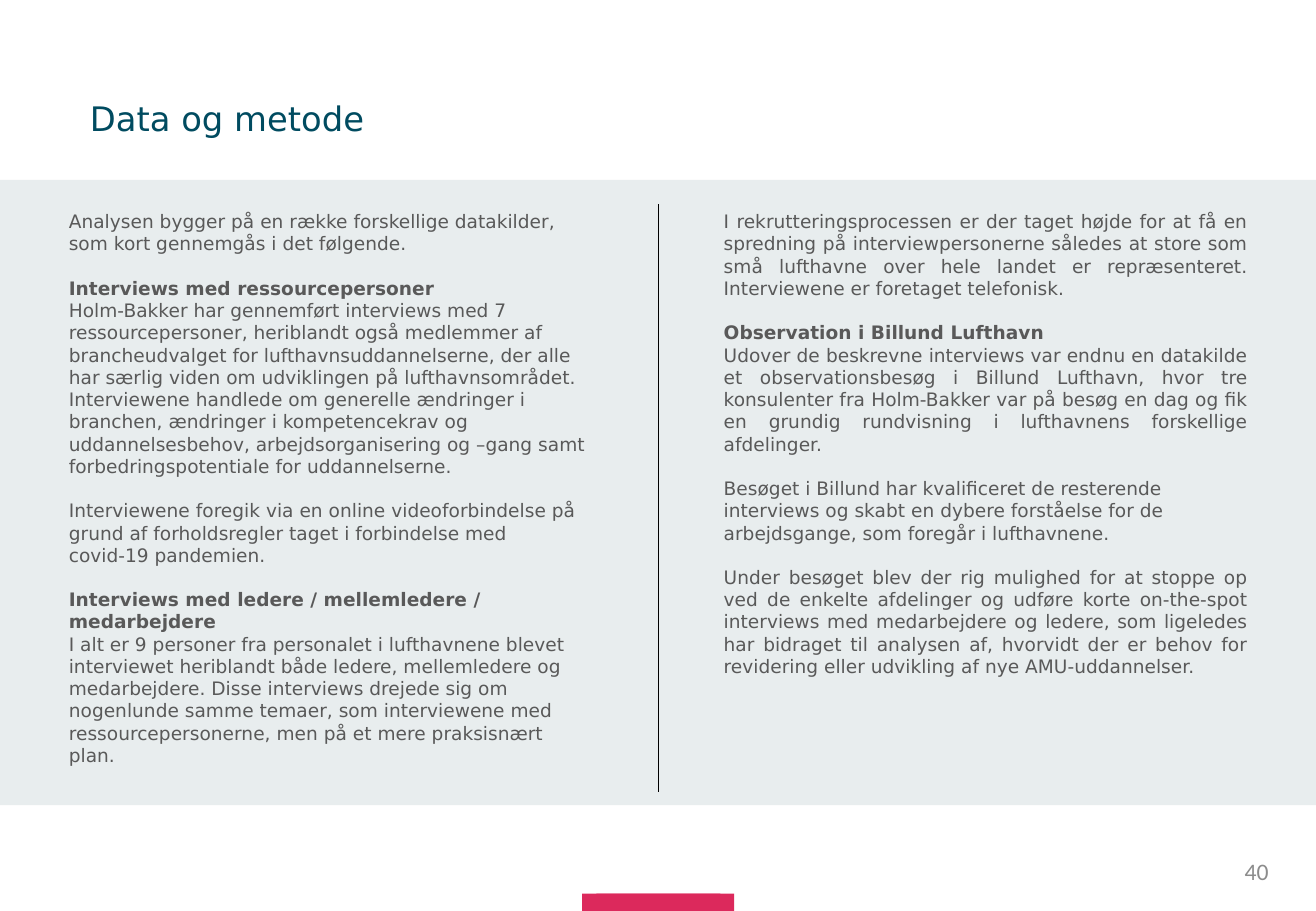
from dataclasses import dataclass

import pptx
import pptx.dml.color
import pptx.enum.shapes
import pptx.enum.text
import pptx.oxml.ns
import pptx.oxml.xmlchemy
import pptx.slide
import pptx.util

Cm = pptx.util.Cm
Pt = pptx.util.Pt
Align = pptx.enum.text.PP_ALIGN
Anchor = pptx.enum.text.MSO_ANCHOR


@dataclass(frozen=True)
class Theme:
    accent: str = "DC295C"
    band: str = "8DA5AD"
    title: str = "004B60"
    body: str = "595959"
    number: str = "8C8C8C"
    divider: str = "000000"
    text_font: str = "DejaVu Sans"
    number_font: str = "Calibri"
    title_size: int = 20
    body_size: int = 11
    number_size: int = 14
    section_gap: int = 13


@dataclass(frozen=True)
class Area:
    left: float
    top: float
    width: float
    height: float

    def lengths(self) -> list[pptx.util.Length]:
        return [Cm(value) for value in (self.left, self.top, self.width, self.height)]


@dataclass(frozen=True)
class Block:
    area: Area
    color: str
    opacity: int = 100


@dataclass(frozen=True)
class Passage:
    text: str
    bold: bool = False
    align: Align = Align.LEFT
    gap: bool = True


@dataclass(frozen=True)
class TextArea:
    area: Area
    passages: list[Passage]
    size: int
    color: str
    font: str = Theme.text_font
    anchor: Anchor = Anchor.TOP
    margin: float = 0.25
    line_spacing: float = 1.0


THEME = Theme()
SLIDE_WIDTH, SLIDE_HEIGHT = 27.51, 19.05
COLUMN_TOP, COLUMN_WIDTH = 4.27, 11.46
DIVIDER_BOTTOM = 16.56

BLOCKS = [
    Block(Area(12.17, 18.69, 3.18, 0.36), THEME.accent),
    Block(Area(12.47, 18.69, 2.59, 0.36), THEME.accent),
    Block(Area(0, 3.76, SLIDE_WIDTH, 13.08), THEME.band, opacity=20),
]

INTERVIEWS = [
    Passage("Analysen bygger på en række forskellige datakilder, som kort gennemgås i det følgende."),
    Passage("Interviews med ressourcepersoner", bold=True),
    Passage(
        "Holm-Bakker har gennemført interviews med 7 ressourcepersoner, heriblandt også "
        "medlemmer af brancheudvalget for lufthavnsuddannelserne, der alle har særlig viden "
        "om udviklingen på lufthavnsområdet. Interviewene handlede om generelle ændringer i "
        "branchen, ændringer i kompetencekrav og uddannelsesbehov, arbejdsorganisering og "
        "–gang samt forbedringspotentiale for uddannelserne.",
        gap=False,
    ),
    Passage(
        "Interviewene foregik via en online videoforbindelse på grund af forholdsregler "
        "taget i forbindelse med covid-19 pandemien."
    ),
    Passage("Interviews med ledere / mellemledere / medarbejdere", bold=True),
    Passage(
        "I alt er 9 personer fra personalet i lufthavnene blevet interviewet heriblandt både "
        "ledere, mellemledere og medarbejdere. Disse interviews drejede sig om nogenlunde "
        "samme temaer, som interviewene med ressourcepersonerne, men på et mere praksisnært plan.",
        gap=False,
    ),
]

OBSERVATION = [
    Passage(
        "I rekrutteringsprocessen er der taget højde for at få en spredning på "
        "interviewpersonerne således at store som små lufthavne over hele landet er "
        "repræsenteret. Interviewene er foretaget telefonisk.",
        align=Align.JUSTIFY,
    ),
    Passage("Observation i Billund Lufthavn", bold=True, align=Align.JUSTIFY),
    Passage(
        "Udover de beskrevne interviews var endnu en datakilde et observationsbesøg i Billund "
        "Lufthavn, hvor tre konsulenter fra Holm-Bakker var på besøg en dag og fik en grundig "
        "rundvisning i lufthavnens forskellige afdelinger.",
        align=Align.JUSTIFY,
        gap=False,
    ),
    Passage(
        "Besøget i Billund har kvalificeret de resterende interviews og skabt en dybere "
        "forståelse for de arbejdsgange, som foregår i lufthavnene."
    ),
    Passage(
        "Under besøget blev der rig mulighed for at stoppe op ved de enkelte afdelinger og "
        "udføre korte on-the-spot interviews med medarbejdere og ledere, som ligeledes har "
        "bidraget til analysen af, hvorvidt der er behov for revidering eller udvikling af "
        "nye AMU-uddannelser.",
        align=Align.JUSTIFY,
    ),
]

TEXT_AREAS = [
    TextArea(Area(20.57, 17.7, 6.2, 1.02), [Passage("40", align=Align.RIGHT)],
             THEME.number_size, THEME.number, THEME.number_font, Anchor.MIDDLE),
    TextArea(Area(1.88, 2.01, 23.72, 1.02), [Passage("Data og metode")],
             THEME.title_size, THEME.title, anchor=Anchor.MIDDLE, margin=0, line_spacing=0.9),
    TextArea(Area(1.19, COLUMN_TOP, COLUMN_WIDTH, 12.7), INTERVIEWS, THEME.body_size, THEME.body),
    TextArea(Area(14.88, COLUMN_TOP, COLUMN_WIDTH, 12.29), OBSERVATION, THEME.body_size, THEME.body),
]


def rgb(color: str) -> pptx.dml.color.RGBColor:
    return pptx.dml.color.RGBColor.from_string(color)


def apply_format(target: object, values: dict[str, object]) -> None:
    for name, value in values.items():
        setattr(target, name, value)


def draw_block(slide: pptx.slide.Slide, block: Block) -> None:
    shape = slide.shapes.add_shape(
        pptx.enum.shapes.MSO_SHAPE.RECTANGLE, *block.area.lengths())
    shape.shadow.inherit = False
    shape.fill.solid()
    shape.fill.fore_color.rgb = rgb(block.color)
    shape.line.fill.background()
    if block.opacity < 100:
        color = shape._element.spPr.find(".//" + pptx.oxml.ns.qn("a:srgbClr"))
        alpha = pptx.oxml.xmlchemy.OxmlElement("a:alpha")
        alpha.set("val", str(block.opacity * 1000))
        color.append(alpha)


def draw_divider(slide: pptx.slide.Slide) -> None:
    middle = Cm(13.77)
    connector = slide.shapes.add_connector(
        pptx.enum.shapes.MSO_CONNECTOR.STRAIGHT,
        middle, Cm(COLUMN_TOP), middle, Cm(DIVIDER_BOTTOM))
    connector.line.color.rgb = rgb(THEME.divider)
    connector.line.width = Pt(0.5)
    connector._element.spPr.append(pptx.oxml.xmlchemy.OxmlElement("a:effectLst"))


def draw_text(slide: pptx.slide.Slide, text_area: TextArea) -> None:
    frame = slide.shapes.add_textbox(*text_area.area.lengths()).text_frame
    margin = Cm(text_area.margin)
    apply_format(frame, {
        "word_wrap": True,
        "vertical_anchor": text_area.anchor,
        "margin_left": margin,
        "margin_right": margin,
        "margin_top": margin // 2,
        "margin_bottom": margin // 2,
    })
    for index, passage in enumerate(text_area.passages):
        paragraph = frame.add_paragraph() if index else frame.paragraphs[0]
        paragraph.text = passage.text
        apply_format(paragraph, {
            "alignment": passage.align,
            "line_spacing": text_area.line_spacing,
            "space_before": Pt(THEME.section_gap if index and passage.gap else 0),
        })
        font = paragraph.runs[0].font
        apply_format(font, {
            "name": text_area.font, "size": Pt(text_area.size), "bold": passage.bold})
        font.color.rgb = rgb(text_area.color)


def main() -> None:
    presentation = pptx.Presentation()
    presentation.slide_width = Cm(SLIDE_WIDTH)
    presentation.slide_height = Cm(SLIDE_HEIGHT)
    slide = presentation.slides.add_slide(presentation.slide_layouts[6])

    # Footer accent and content band
    for block in BLOCKS:
        draw_block(slide, block)
    # Line between the columns
    draw_divider(slide)
    # Page number, title and both columns
    for text_area in TEXT_AREAS:
        draw_text(slide, text_area)

    presentation.save("out.pptx")


if __name__ == "__main__":
    main()
